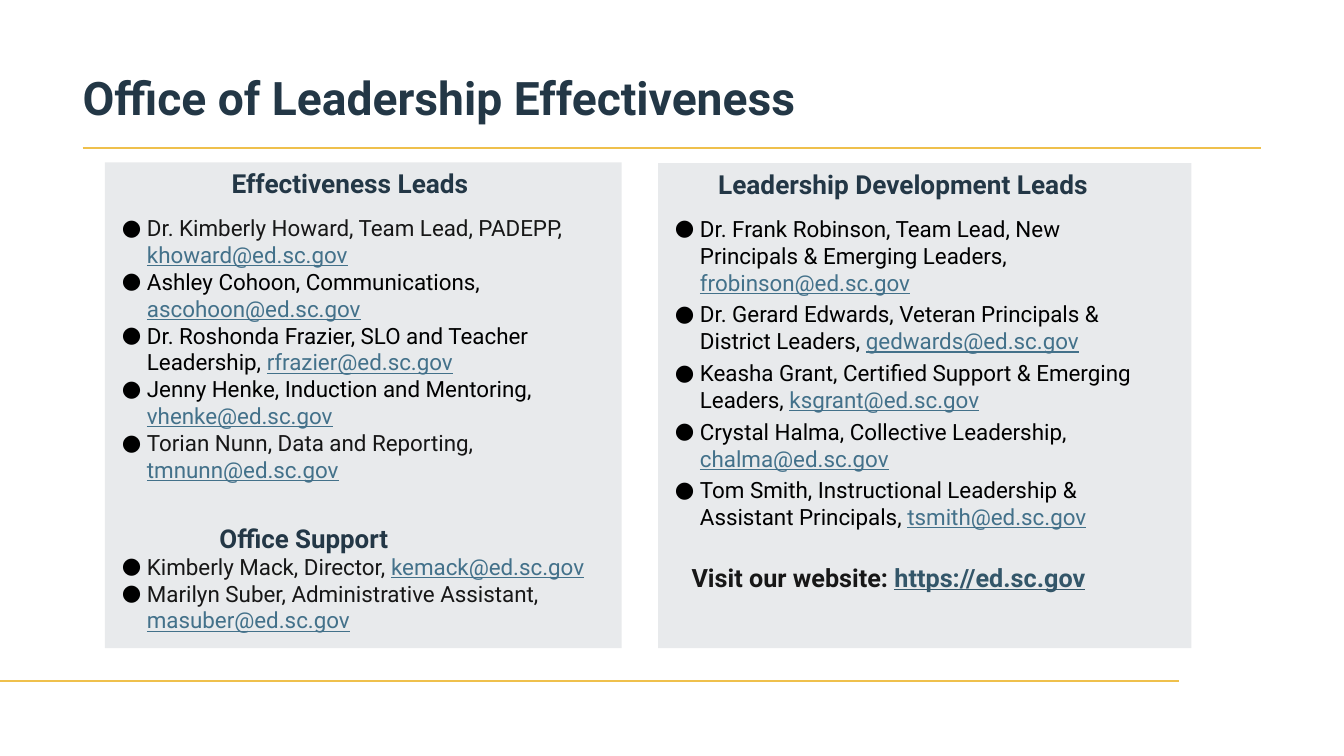
from lxml.etree import SubElement
from pptx import Presentation
from pptx.dml.color import RGBColor
from pptx.enum.shapes import MSO_CONNECTOR, MSO_SHAPE
from pptx.enum.text import PP_ALIGN
from pptx.oxml.ns import qn
from pptx.util import Pt

NAVY = RGBColor(0x23, 0x37, 0x46)
GOLD = RGBColor(0xEF, 0xC0, 0x4C)
BLACK = RGBColor(0, 0, 0)
CHARCOAL = RGBColor(0x17, 0x17, 0x17)
LINK = RGBColor(0x43, 0x71, 0x8A)
DARK_LINK = RGBColor(0x33, 0x56, 0x69)
FONT = "Roboto"

EFFECTIVENESS = [
    ("Dr. Kimberly Howard, Team Lead, PADEPP, ", "khoward@ed.sc.gov", CHARCOAL),
    ("Ashley Cohoon, Communications, ", "ascohoon@ed.sc.gov", BLACK),
    ("Dr. Roshonda Frazier, SLO and Teacher Leadership, ", "rfrazier@ed.sc.gov", BLACK),
    ("Jenny Henke, Induction and Mentoring, ", "vhenke@ed.sc.gov", BLACK),
    ("Torian Nunn, Data and Reporting, ", "tmnunn@ed.sc.gov", CHARCOAL),
]
SUPPORT = [
    ("Kimberly Mack, Director, ", "kemack@ed.sc.gov", CHARCOAL),
    ("Marilyn Suber, Administrative Assistant, ", "masuber@ed.sc.gov", CHARCOAL),
]
DEVELOPMENT = [
    ("Dr. Frank Robinson, Team Lead, New Principals & Emerging Leaders, ",
     "frobinson@ed.sc.gov", BLACK),
    ("Dr. Gerard Edwards, Veteran Principals & District Leaders, ",
     "gedwards@ed.sc.gov", BLACK),
    ("Keasha Grant, Certified Support & Emerging Leaders, ", "ksgrant@ed.sc.gov", BLACK),
    ("Crystal Halma, Collective Leadership, ", "chalma@ed.sc.gov", BLACK),
    ("Tom Smith, Instructional Leadership & Assistant Principals, ",
     "tsmith@ed.sc.gov", BLACK),
]


def add_text_frame(s, x, y, w, h):
    tf = s.shapes.add_textbox(Pt(x), Pt(y), Pt(w), Pt(h)).text_frame
    tf.word_wrap = True
    tf.margin_left = tf.margin_right = tf.margin_top = tf.margin_bottom = 0
    return tf


def format_run(r, size, color, bold=False, underline=False):
    r.font.name, r.font.size = FONT, Pt(size)
    r.font.color.rgb = color
    r.font.bold, r.font.underline = bold, underline


def add_heading(s, x, y, w, h, text, size, align=PP_ALIGN.CENTER, spacing=None):
    p = add_text_frame(s, x, y, w, h).paragraphs[0]
    p.text = text
    p.alignment = align
    if spacing:
        p.line_spacing = Pt(spacing)
    format_run(p.runs[0], size, NAVY, bold=True)


def add_rule(s, x1, x2, y):
    line = s.shapes.add_connector(MSO_CONNECTOR.STRAIGHT, Pt(x1), Pt(y), Pt(x2), Pt(y))
    line.line.color.rgb = GOLD
    line.line.width = Pt(1.5)
    SubElement(line._element.spPr, qn("a:effectLst"))


def add_linked_text(p, text, link, size, color, link_color, bold=False):
    p.text = text
    format_run(p.runs[0], size, color, bold)
    r = p.add_run()
    r.text = link
    format_run(r, size, link_color, bold, underline=True)


def add_contacts(tf, contacts, gap=0, first_gap=0):
    for i, (role, email, color) in enumerate(contacts):
        p = tf.paragraphs[0] if not tf.text else tf.add_paragraph()
        # Hanging bullet
        pPr = p._p.get_or_add_pPr()
        pPr.set("marL", str(Pt(18)))
        pPr.set("indent", str(-Pt(18)))
        bullet_color = SubElement(pPr, qn("a:buClr"))
        SubElement(bullet_color, qn("a:srgbClr")).set("val", str(BLACK))
        SubElement(pPr, qn("a:buFont")).set("typeface", FONT)
        SubElement(pPr, qn("a:buChar")).set("char", "●")
        space = gap if i else first_gap
        if space:
            p.space_before = Pt(space)
        add_linked_text(p, role, email, 16, color, LINK)


def add_panel(s, x, y, w, h, heading, list_w):
    """Draw a tinted panel with its heading; return the frame for its list."""
    sp = s.shapes.add_shape(MSO_SHAPE.RECTANGLE, Pt(x), Pt(y), Pt(w), Pt(h))
    sp.shadow.inherit = False
    sp.fill.solid()
    sp.fill.fore_color.rgb = NAVY
    color = sp._element.spPr.find(qn("a:solidFill"))[0]
    SubElement(color, qn("a:alpha")).set("val", "10000")
    sp.line.fill.background()
    add_heading(s, x + 30, y + 10, 290, 17, heading, 18.7, spacing=16)
    return add_text_frame(s, x + 12, y + 37, list_w, h - 37)


def add_title(s, x, y, w, h):
    add_heading(s, x, y, w, h, "Office of Leadership Effectiveness", 33,
                PP_ALIGN.LEFT, 33.3)
    add_rule(s, x, x + w, y + 50)


def add_effectiveness(s, x, y, w, h):
    tf = add_panel(s, x, y, w, h, "Effectiveness Leads", w - 12)
    add_contacts(tf, EFFECTIVENESS)
    add_contacts(tf, SUPPORT, first_gap=50)
    add_heading(s, x + 34, y + 257, 216, 22, "Office Support", 18.5)


def add_development(s, x, y, w, h):
    tf = add_panel(s, x, y, w, h, "Leadership Development Leads", w - 37)
    add_contacts(tf, DEVELOPMENT, gap=3.5)
    # Website line
    p = tf.add_paragraph()
    p._p.get_or_add_pPr().set("marL", str(Pt(12)))
    p.space_before = Pt(22.7)
    add_linked_text(p, "Visit our website: ", "https://ed.sc.gov", 18, CHARCOAL,
                    DARK_LINK, bold=True)


def main():
    prs = Presentation()
    prs.slide_width, prs.slide_height = Pt(960), Pt(540)
    s = prs.slides.add_slide(prs.slide_layouts[6])
    add_title(s, 59, 56, 842, 35)
    add_effectiveness(s, 75, 116, 369, 347)
    add_development(s, 470, 116.6, 381, 346.4)
    # Footer rule
    add_rule(s, 0, 842, 486.5)
    prs.save("out.pptx")


if __name__ == "__main__":
    main()
